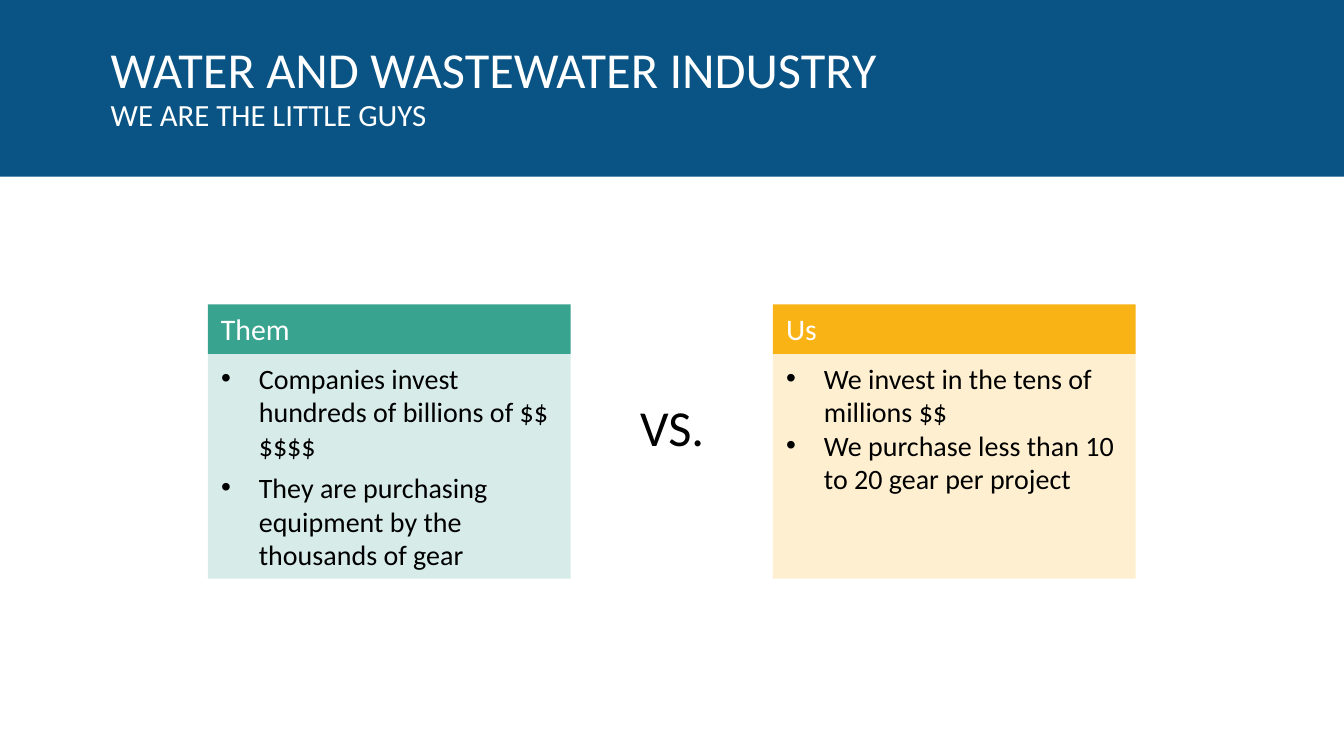
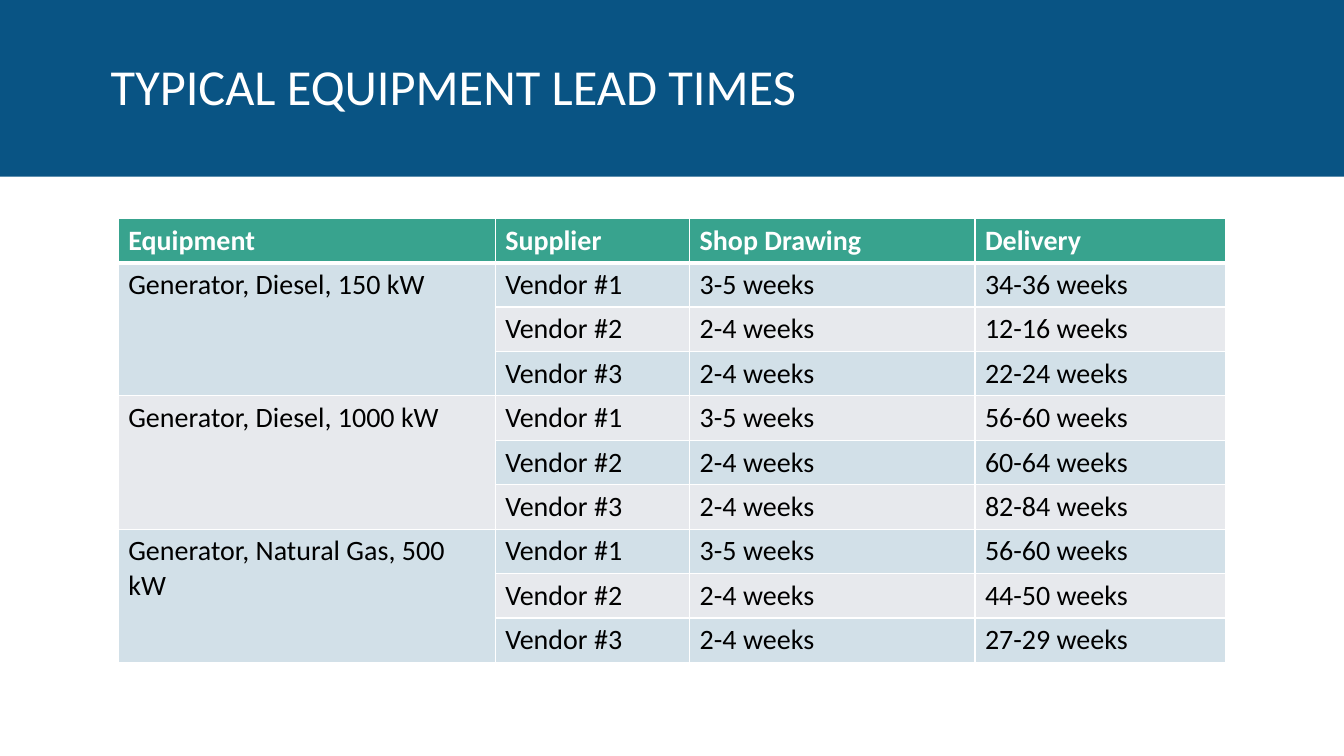
from lxml import etree
from pptx import Presentation
from pptx.dml.color import RGBColor
from pptx.enum import shapes, text
from pptx.oxml import ns
from pptx.util import Cm, Pt

BLUE, GREEN, GOLD = "095484", "38A38E", "FAB315"
GREY, WHITE, BLACK = "E7E9ED", "FFFFFF", "000000"
WIDE, HIGH = 33.87, 19.05
FONT = "Calibri"
LEFT, MID = text.PP_ALIGN.LEFT, text.PP_ALIGN.CENTER
TOP, CENTER, BOTTOM = (
    text.MSO_ANCHOR.TOP, text.MSO_ANCHOR.MIDDLE, text.MSO_ANCHOR.BOTTOM)


def color(code):
    return RGBColor.from_string(code)


def style(run, size, hue, bold=False):
    font = run.font
    font.name, font.size, font.bold = FONT, Pt(size), bold
    font.color.rgb = color(hue)


def write(frame, *lines, size=20, hue=BLACK, bold=False, align=LEFT,
          after=0, lead=1.0):
    frame.text = "\n".join(lines)
    for para in frame.paragraphs:
        para.alignment, para.line_spacing = align, lead
        para.space_before, para.space_after = Pt(0), Pt(after)
        for run in para.runs:
            style(run, size, hue, bold)


def paint(node, fill, hue, alpha=100):
    fill.solid()
    fill.fore_color.rgb = color(hue)
    if alpha < 100:
        tint = next(node.iter(ns.qn("a:srgbClr")))
        etree.SubElement(tint, ns.qn("a:alpha"), val=str(alpha * 1000))


def edge(node, **widths):
    props = node.find(ns.qn("a:tcPr"))
    for spot, side in enumerate("LRTB"):
        line = etree.Element(
            ns.qn("a:ln" + side), w=str(Pt(widths.get(side, 1))))
        fill = etree.SubElement(line, ns.qn("a:solidFill"))
        etree.SubElement(fill, ns.qn("a:srgbClr"), val=WHITE)
        props.insert(spot, line)


def fit(frame, anchor=TOP, side=0.25, edge=0.13):
    frame.word_wrap = True
    frame.auto_size = text.MSO_AUTO_SIZE.NONE
    frame.vertical_anchor = anchor
    frame.margin_left = frame.margin_right = Cm(side)
    frame.margin_top = frame.margin_bottom = Cm(edge)


class Deck:
    def __init__(self):
        self.show = Presentation()
        self.show.slide_width, self.show.slide_height = Cm(WIDE), Cm(HIGH)

    def start(self, layout, title, sub=None):
        self.slide = self.show.slides.add_slide(
            self.show.slide_layouts[layout])
        band = self.block(0, 0, WIDE, 4.45, BLUE)
        self.slide.shapes.element.insert(2, band.element)
        head = self.slide.shapes.title
        self.place(head, 2.54, 0.97, 28.78, 2.54)
        fit(head.text_frame, CENTER)
        write(head.text_frame, title, size=36, hue=WHITE, lead=0.9)
        if sub:
            para = head.text_frame.paragraphs[0]
            para.add_line_break()
            for gap in head.element.iter(ns.qn("a:br")):
                etree.SubElement(gap, ns.qn("a:rPr"), sz="3600")
            run = para.add_run()
            run.text = sub
            style(run, 22, WHITE)

    def place(self, shape, x, y, w, h):
        shape.left, shape.top = Cm(x), Cm(y)
        shape.width, shape.height = Cm(w), Cm(h)

    def block(self, x, y, w, h, hue):
        shape = self.slide.shapes.add_shape(
            shapes.MSO_SHAPE.RECTANGLE, Cm(x), Cm(y), Cm(w), Cm(h))
        shape.shadow.inherit = False
        shape.line.fill.background()
        paint(shape.element, shape.fill, hue)
        return shape

    def panel(self, slot, x, hue, name, lines, after):
        y, w, h = 7.67, 9.14, 1.25
        head = self.block(x, y, w, h, hue)
        fit(head.text_frame, BOTTOM, 0.33, 0.18)
        write(head.text_frame, name, size=21.3, hue=WHITE)
        body = self.slide.placeholders[slot]
        self.place(body, x, y + h, w, 5.66)
        paint(body.element, body.fill, hue, 20)
        fit(body.text_frame, TOP, 0.33, 0.18)
        write(body.text_frame, *lines, after=after)

    def label(self, x, y, w, h, words):
        box = self.slide.shapes.add_textbox(Cm(x), Cm(y), Cm(w), Cm(h))
        fit(box.text_frame)
        write(box.text_frame, words, size=36, align=MID)

    def table(self, x, y, widths, tall, rows, span):
        frame = self.slide.shapes.add_table(
            len(rows), len(widths), Cm(x), Cm(y),
            Cm(sum(widths)), Cm(tall * len(rows)))
        grid = frame.table
        for col, width in zip(grid.columns, widths):
            col.width = Cm(width)
        nodes = frame.element.iter(ns.qn("a:tc"))
        cells = list(zip(grid.iter_cells(), list(nodes)))
        for spot, (cell, node) in enumerate(cells):
            row, col = divmod(spot, len(widths))
            top = row == 0
            if top:
                paint(node, cell.fill, GREEN)
            elif row % 2:
                paint(node, cell.fill, BLUE, 18)
            else:
                paint(node, cell.fill, GREY)
            edge(node, B=3 if top else 1, T=3 if row == 1 else 1)
            if rows[row][col]:
                write(cell.text_frame, rows[row][col],
                      hue=WHITE if top else BLACK, bold=top)
        for row in range(1, len(rows), span):
            grid.cell(row, 0).merge(grid.cell(row + span - 1, 0))


def main():
    deck = Deck()
    deck.start(3, "WATER AND WASTEWATER INDUSTRY", "WE ARE THE LITTLE GUYS")
    panels = [
        (GREEN, "Them", 6, [
            "Companies invest hundreds of billions of $$$$$$",
            "They are purchasing equipment by the thousands of gear"]),
        (GOLD, "Us", 0, [
            "We invest in the tens of millions $$",
            "We purchase less than 10 to 20 gear per project"]),
    ]
    for spot, (hue, name, after, lines) in enumerate(panels):
        deck.panel(spot + 1, 5.24 + 14.24 * spot, hue, name, lines, after)
    deck.label(15.06, 9.86, 3.76, 1.8, "VS.")

    deck.start(5, "TYPICAL EQUIPMENT LEAD TIMES")
    times = {
        "Generator, Diesel, 150 kW": ["34-36", "12-16", "22-24"],
        "Generator, Diesel, 1000 kW": ["56-60", "60-64", "82-84"],
        "Generator, Natural Gas, 500 kW": ["56-60", "44-50", "27-29"],
    }
    draw = ["3-5", "2-4", "2-4"]
    rows = [["Equipment", "Supplier", "Shop Drawing", "Delivery"]]
    for item, waits in times.items():
        for spot, (plan, wait) in enumerate(zip(draw, waits)):
            rows.append(["" if spot else item, f"Vendor #{spot + 1}",
                         f"{plan} weeks", f"{wait} weeks"])
    deck.table(2.98, 5.5, [9.5, 4.9, 7.19, 6.32], 1.1, rows, len(draw))
    deck.show.save("out.pptx")


if __name__ == "__main__":
    main()
